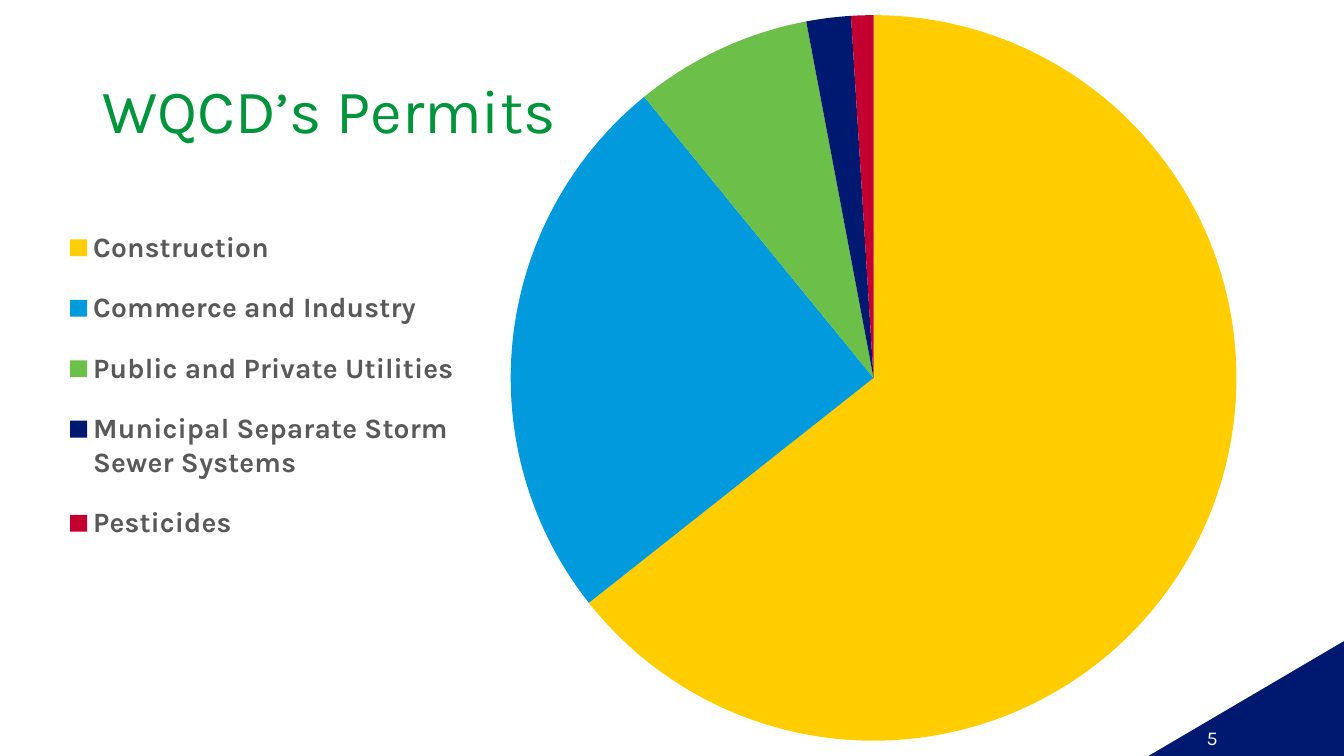
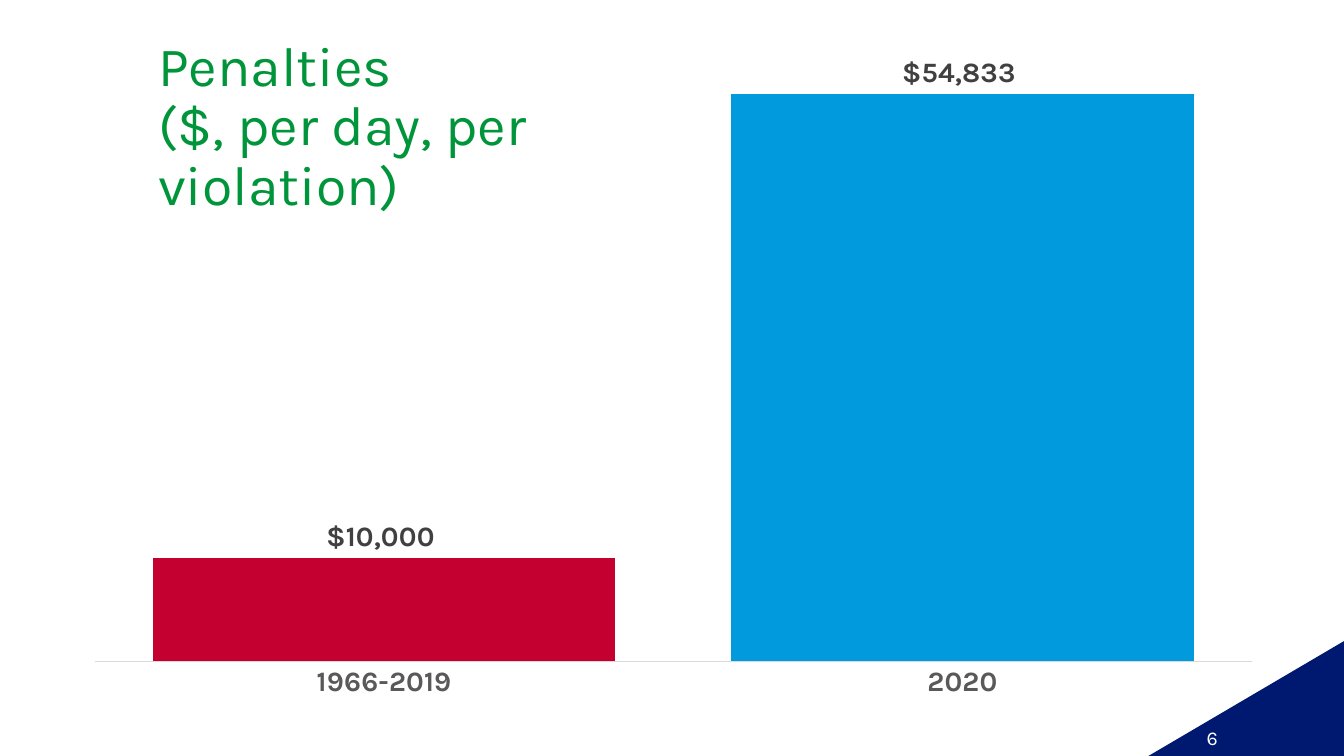
from dataclasses import dataclass

from pptx import Presentation
from pptx import util as u
from pptx.chart.data import CategoryChartData
from pptx.dml.color import RGBColor
from pptx.enum import chart as charts, shapes, text
from pptx.oxml import ns, xmlchemy

WIDTH, HEIGHT = 13.33, 7.5
FONT = "Karla"
COLORS = {
    "title": "00953A",
    "navy": "001970",
    "yellow": "FFCD00",
    "blue": "009ADD",
    "green": "6CC049",
    "red": "C3002F",
    "white": "FFFFFF",
    "legend": "595959",
    "label": "404040",
    "axis": "D9D9D9",
}
DOLLARS = '"$"#,##0_);[Red]\\("$"#,##0\\)'


@dataclass(frozen=True)
class Box:
    left: float
    top: float
    width: float
    height: float

    def lengths(self) -> tuple:
        return tuple(u.Inches(n) for n in (self.left, self.top, self.width, self.height))


@dataclass(frozen=True)
class Category:
    name: str
    value: float
    color: str


PERMITS = (
    Category("Construction", 65, "yellow"),
    Category("Commerce and Industry", 25, "blue"),
    Category("Public and Private Utilities", 8, "green"),
    Category("Municipal Separate Storm Sewer Systems", 2, "navy"),
    Category("Pesticides", 1, "red"),
)
PENALTIES = (
    Category("1966-2019", 10000, "red"),
    Category("2020", 54833, "blue"),
)


def rgb(name: str) -> RGBColor:
    return RGBColor.from_string(COLORS[name])


def style_font(font, size: float, color: str, bold: bool = False) -> None:
    font.name = FONT
    font.size = u.Pt(size)
    font.bold = bold
    font.color.rgb = rgb(color)


def add_text(slide, box: Box, words: str, size: float, color: str, spacing: float = 1.0) -> None:
    frame = slide.shapes.add_textbox(*box.lengths()).text_frame
    frame.word_wrap = True
    frame.vertical_anchor = text.MSO_ANCHOR.MIDDLE
    frame.text = words
    paragraph = frame.paragraphs[0]
    paragraph.line_spacing = spacing
    for run in paragraph.runs:
        style_font(run.font, size, color)


def add_title(slide, box: Box, words: str, size: float) -> None:
    add_text(slide, box, words, size, "title", 0.9)


def add_numbered_slide(presentation, number: int):
    slide = presentation.slides.add_slide(presentation.slide_layouts[6])
    corner = slide.shapes.add_shape(
        shapes.MSO_SHAPE.RIGHT_TRIANGLE, *Box(11.79, 5.96, 1.14, 1.94).lengths()
    )
    corner.rotation = 270
    corner.shadow.inherit = False
    corner.fill.solid()
    corner.fill.fore_color.rgb = rgb("navy")
    corner.line.fill.background()
    add_text(slide, Box(11.87, 7.12, 0.55, 0.4), str(number), 14, "white")
    return slide


def place_part(chart, tag: str, position: int, share: Box) -> None:
    part = chart.element.find(f".//{ns.qn(tag)}")
    for old in part.findall(ns.qn("c:layout")):
        part.remove(old)
    layout = xmlchemy.OxmlElement("c:layout")
    manual = xmlchemy.OxmlElement("c:manualLayout")
    layout.append(manual)
    settings = {
        "xMode": "edge", "yMode": "edge",
        "x": share.left, "y": share.top, "w": share.width, "h": share.height,
    }
    if tag == "c:plotArea":
        settings = {"layoutTarget": "inner", **settings}
    for name, value in settings.items():
        setting = xmlchemy.OxmlElement(f"c:{name}")
        setting.set("val", str(value))
        manual.append(setting)
    part.insert(position, layout)


def add_category_chart(slide, kind, box: Box, categories: tuple[Category, ...], plot_share: Box):
    data = CategoryChartData()
    data.categories = [category.name for category in categories]
    data.add_series("Series 1", [category.value for category in categories])
    chart = slide.shapes.add_chart(kind, *box.lengths(), data).chart
    chart.has_title = False
    chart.has_legend = False
    style_font(chart.font, 20, "legend", True)
    series = chart.plots[0].series[0]
    for index, category in enumerate(categories):
        point = series.points[index].format
        point.fill.solid()
        point.fill.fore_color.rgb = rgb(category.color)
        point.line.fill.background()
    place_part(chart, "c:plotArea", 0, plot_share)
    return chart


def add_permits_slide(presentation) -> None:
    slide = add_numbered_slide(presentation, 5)
    add_title(slide, Box(0.92, 0.4, 11.5, 1.45), "WQCD’s Permits", 44)
    chart = add_category_chart(
        slide, charts.XL_CHART_TYPE.PIE, Box(0, 0, WIDTH, HEIGHT), PERMITS,
        Box(0.38, 0.02, 0.54, 0.96),
    )
    chart.plots[0].vary_by_categories = True
    chart.has_legend = True
    legend = chart.legend
    legend.position = charts.XL_LEGEND_POSITION.LEFT
    legend.include_in_layout = False
    style_font(legend.font, 20, "legend", True)
    place_part(chart, "c:legend", 1, Box(0.04, 0.27, 0.31, 0.48))


def add_penalties_slide(presentation) -> None:
    slide = add_numbered_slide(presentation, 6)
    chart = add_category_chart(
        slide, charts.XL_CHART_TYPE.COLUMN_CLUSTERED, Box(0.21, 0.26, 12.21, 7), PENALTIES,
        Box(0.06, 0.02, 0.94, 0.88),
    )
    plot = chart.plots[0]
    plot.vary_by_categories = False
    plot.gap_width = 25
    plot.overlap = -27
    plot.has_data_labels = True
    labels = plot.data_labels
    labels.show_value = True
    labels.number_format = DOLLARS
    labels.number_format_is_linked = False
    labels.position = charts.XL_LABEL_POSITION.OUTSIDE_END
    style_font(labels.font, 20, "label", True)

    values = chart.value_axis
    values.minimum_scale = 0
    values.maximum_scale = 60000
    values.has_major_gridlines = False
    values.visible = False
    years = chart.category_axis
    years.major_tick_mark = charts.XL_TICK_MARK.NONE
    years.format.line.color.rgb = rgb("axis")
    years.format.line.width = u.Pt(0.75)
    style_font(years.tick_labels.font, 20, "legend", True)

    add_title(slide, Box(1.47, 0.69, 5.4, 1.16), "Penalties\v($, per day, per violation)", 39.6)


def main() -> None:
    presentation = Presentation()
    presentation.slide_width = u.Inches(WIDTH)
    presentation.slide_height = u.Inches(HEIGHT)
    add_permits_slide(presentation)
    add_penalties_slide(presentation)
    presentation.save("out.pptx")


if __name__ == "__main__":
    main()
